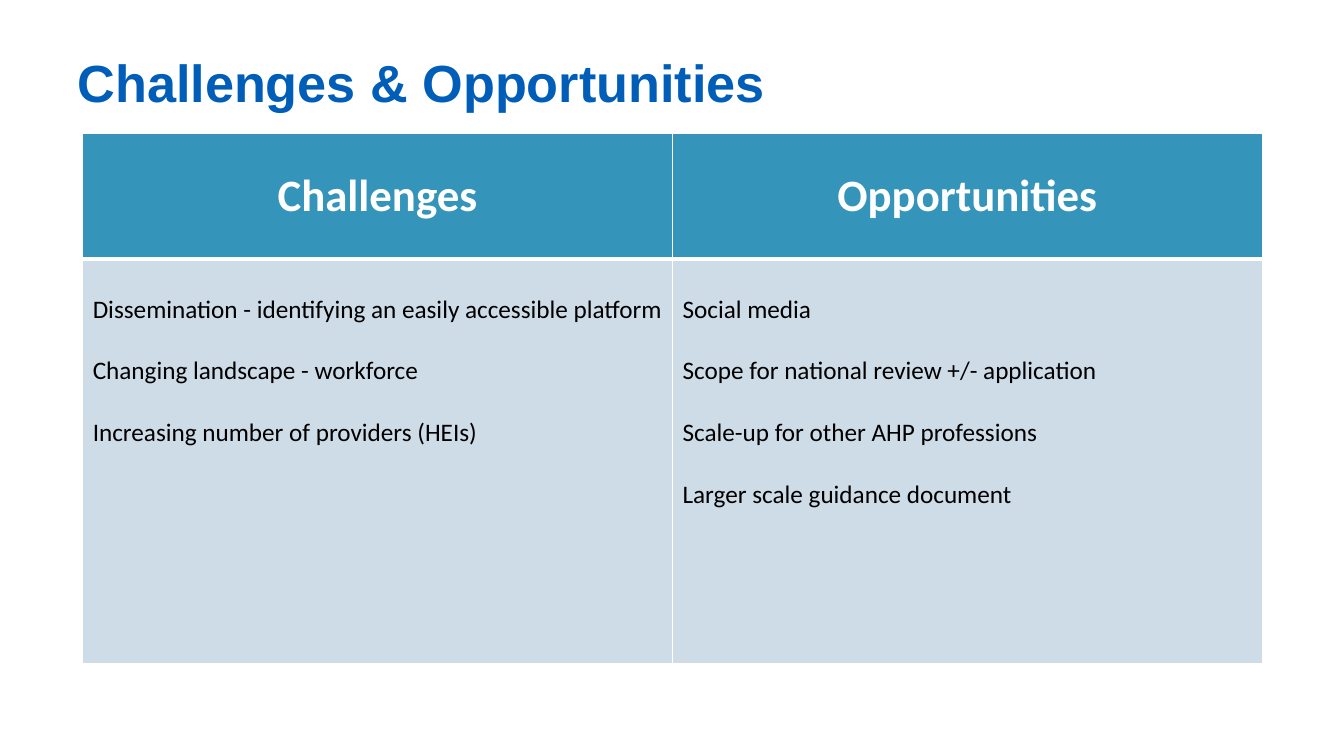
import pptx
import pptx.util
import pptx.dml.color
import pptx.enum.text
import pptx.oxml
import pptx.oxml.ns

Inches, Pt = pptx.util.Inches, pptx.util.Pt
ALIGN, ANCHOR = pptx.enum.text.PP_ALIGN, pptx.enum.text.MSO_ANCHOR
COLORS = {"title": "005EB8", "header": "3494BA", "body": "CEDCE7",
          "white": "FFFFFF", "black": "000000"}
COLUMNS = {
    "Challenges": [
        "Dissemination - identifying an easily accessible platform",
        "Changing landscape - workforce",
        "Increasing number of providers (HEIs)",
    ],
    "Opportunities": [
        "Social media",
        "Scope for national review +/- application",
        "Scale-up for other AHP professions",
        "Larger scale guidance document",
    ],
}


def add_text(p, text, color, **font):
    r = p.add_run()
    r.text = text
    r.font.color.rgb = pptx.dml.color.RGBColor.from_string(COLORS[color])
    for name, value in font.items():
        setattr(r.font, name, value)


def format_cell(cell, fill, borders):
    cell.fill.solid()
    cell.fill.fore_color.rgb = pptx.dml.color.RGBColor.from_string(COLORS[fill])
    tcPr = cell._tc.get_or_add_tcPr()
    for i, (side, width) in enumerate(borders.items()):
        ln = pptx.oxml.parse_xml(
            f'<a:ln{side} {pptx.oxml.ns.nsdecls("a")} w="{Pt(width)}"><a:solidFill>'
            f'<a:srgbClr val="{COLORS["white"]}"/></a:solidFill></a:ln{side}>')
        tcPr.insert(i, ln)


prs = pptx.Presentation()
prs.slide_width, prs.slide_height = Inches(13.33), Inches(7.5)
s = prs.slides.add_slide(prs.slide_layouts[6])

tf = s.shapes.add_textbox(Inches(0.67), Inches(0.18), Inches(12), Inches(1.25)).text_frame
tf.word_wrap = True
tf.vertical_anchor = ANCHOR.MIDDLE
add_text(tf.paragraphs[0], "Challenges & Opportunities", "title",
         name="Arial", size=Pt(37.3), bold=True)

table = s.shapes.add_table(2, len(COLUMNS), Inches(0.82), Inches(1.32),
                           Inches(11.7), Inches(5.26)).table
table.rows[0].height, table.rows[1].height = Inches(1.25), Inches(4.01)

for col, (heading, points) in enumerate(COLUMNS.items()):
    table.columns[col].width = Inches(5.85)

    header = table.cell(0, col)
    format_cell(header, "header", {"L": 1, "R": 1, "T": 1, "B": 3})
    header.vertical_anchor = ANCHOR.MIDDLE
    p = header.text_frame.paragraphs[0]
    p.alignment = ALIGN.CENTER
    add_text(p, heading, "white", name="Calibri", size=Pt(32), bold=True)

    body = table.cell(1, col)
    format_cell(body, "body", {"L": 1, "R": 1, "T": 3, "B": 1})
    body.margin_top, body.margin_right = Inches(0.35), Inches(0.05)
    tf = body.text_frame
    for i, point in enumerate(points):
        p = tf.add_paragraph() if i else tf.paragraphs[0]
        if i:
            p.space_before = Pt(22)
        add_text(p, point, "black", name="Calibri", size=Pt(18), bold=False)

prs.save("out.pptx")
